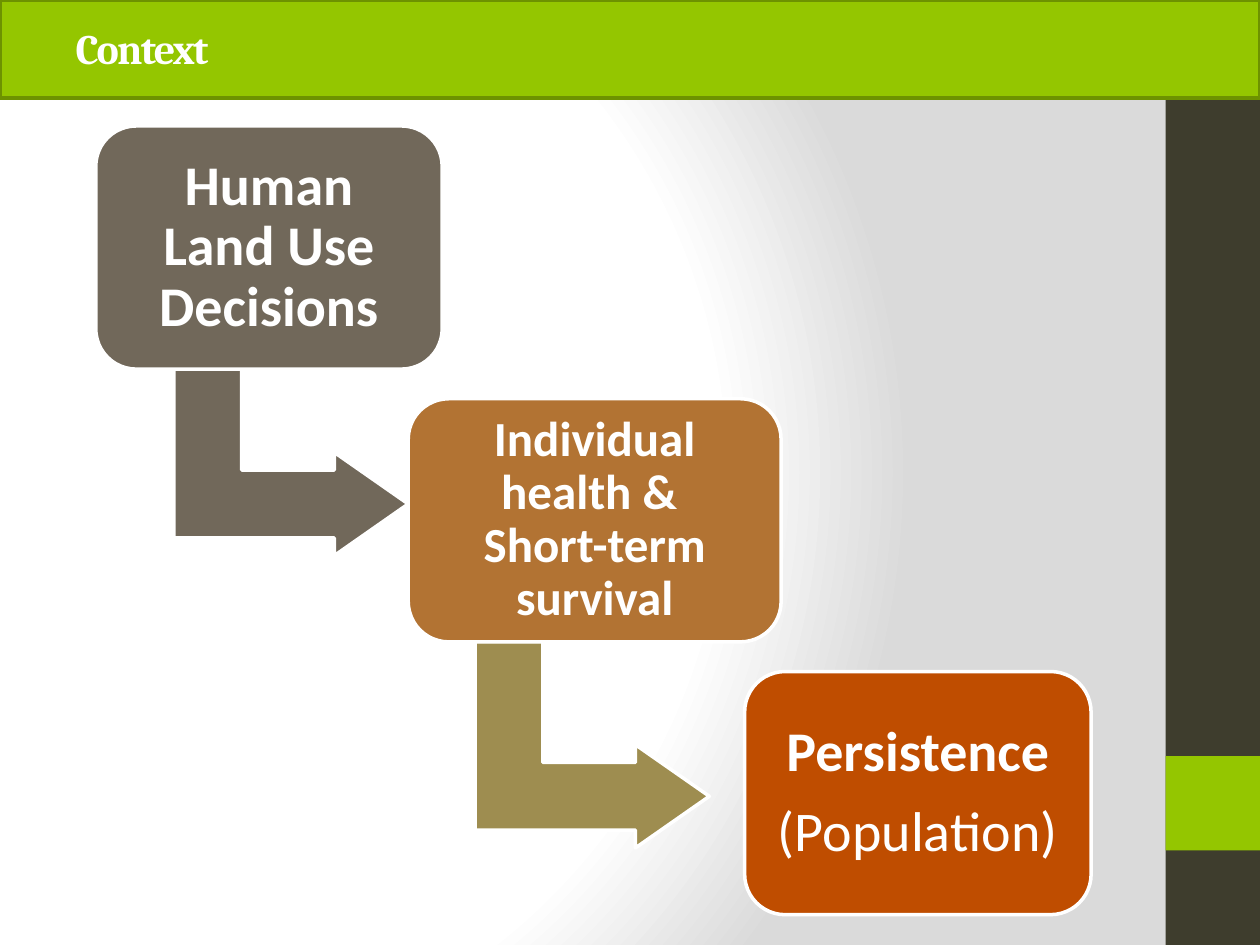
from pptx import Presentation
from pptx.dml.color import RGBColor
from pptx.enum.shapes import MSO_SHAPE
from pptx.enum.text import MSO_ANCHOR, MSO_AUTO_SIZE, PP_ALIGN
from pptx.oxml import parse_xml
from pptx.oxml.ns import nsdecls
from pptx.util import Inches, Pt

RECT = MSO_SHAPE.RECTANGLE
ROUNDED = MSO_SHAPE.ROUNDED_RECTANGLE
BENT_ARROW = MSO_SHAPE.BENT_UP_ARROW
MIDDLE = MSO_ANCHOR.MIDDLE
NO_FIT = MSO_AUTO_SIZE.NONE
LEFT, CENTER = PP_ALIGN.LEFT, PP_ALIGN.CENTER

CELL = Inches(0.25)
COLS, ROWS = 40, 30
GREEN, DARK, WHITE = "94C600", "3E3D2D", "FFFFFF"
STOPS = [(0, WHITE), (75, WHITE), (100, "DADADA")]
ARROW_ADJ = (0.328, 0.25, 0.358)
ARROW_SIZE = (6.56, 7.44)
STEP_HEIGHT, STEP_PITCH = 7.72, 8.66
STEPS = [
    (0, 11, "71685A", 32, [("Human Land Use Decisions", True)]),
    (9.92, 11.84, "B27333", 28, [("Individual health &  Short-term survival", True)]),
    (20.6, 11, "BF4D00", 32, [("Persistence", True), ("(Population)", False)]),
]
ARROWS = [(2.92, 6.64, "71685A"), (12.48, 15.92, "9E8D50")]


def color(value):
    return RGBColor.from_string(value)


def grid(*cells):
    return [round(c * CELL) for c in cells]


def add_block(s, kind, box, fill, line=None):
    sp = s.shapes.add_shape(kind, *grid(*box))
    sp.shadow.inherit = False
    sp.fill.solid()
    sp.fill.fore_color.rgb = color(fill)
    if line:
        sp.line.color.rgb = color(line)
        sp.line.width = Pt(2)
    else:
        sp.line.fill.background()
    return sp


def add_run(p, text, font, size, bold):
    r = p.add_run()
    r.text = text
    r.font.name, r.font.size, r.font.bold = font, Pt(size), bold
    r.font.color.rgb = color(WHITE)
    return r


def add_background(s):
    stops = "".join(
        f'<a:gs pos="{pos * 1000}"><a:srgbClr val="{value}"/></a:gs>'
        for pos, value in STOPS
    )
    gradient = parse_xml(
        f'<a:gradFill {nsdecls("a")} rotWithShape="1"><a:gsLst>{stops}</a:gsLst>'
        '<a:path path="circle">'
        '<a:fillToRect l="20000" t="50000" r="100000" b="50000"/>'
        "</a:path></a:gradFill>"
    )
    s.background.fill.solid()
    bg = s._element.cSld.bg.bgPr
    bg.replace(bg[0], gradient)


def add_sidebar(s, x, y, w, h):
    add_block(s, RECT, (x, y, w, h), DARK)
    add_block(s, RECT, (x, y + 0.8 * h, w, w), GREEN)


def add_step(s, box, fill, size, lines):
    sp = add_block(s, ROUNDED, box, fill, WHITE)
    tf = sp.text_frame
    tf.word_wrap = True
    tf.vertical_anchor = MIDDLE
    tf.margin_left = tf.margin_right = Inches(0.14)
    tf.margin_top = tf.margin_bottom = Inches(0.14)
    for i, (text, bold) in enumerate(lines):
        p = tf.add_paragraph() if i else tf.paragraphs[0]
        p.alignment = CENTER
        p.line_spacing = 0.9
        p.space_after = Pt(0.35 * size)
        add_run(p, text, "Calibri", size, bold)


def add_arrow(s, x, y, fill):
    sp = add_block(s, BENT_ARROW, (x, y, *ARROW_SIZE), fill, WHITE)
    sp.rotation = 90
    for i, value in enumerate(ARROW_ADJ):
        sp.adjustments[i] = value


def add_cascade(s, x, y):
    for i, (dx, w, fill, size, lines) in enumerate(STEPS):
        if i < len(ARROWS):
            ax, ay, arrow_fill = ARROWS[i]
            add_arrow(s, x + ax, y + ay, arrow_fill)
        add_step(s, (x + dx, y + i * STEP_PITCH, w, STEP_HEIGHT), fill, size, lines)


def add_title(s, box, text):
    sp = s.shapes.title
    sp.left, sp.top, sp.width, sp.height = grid(*box)
    s.shapes._spTree.append(sp._element)
    tf = sp.text_frame
    tf.word_wrap = True
    tf.auto_size = NO_FIT
    tf.vertical_anchor = MIDDLE
    p = tf.paragraphs[0]
    p.alignment = LEFT
    r = add_run(p, text, "Cambria", 24, True)
    r.font._element.set("spc", "-100")


def main():
    prs = Presentation()
    prs.slide_width, prs.slide_height = grid(COLS, ROWS)
    s = prs.slides.add_slide(prs.slide_layouts[5])
    add_background(s)
    add_sidebar(s, COLS - 3, 0, 3, ROWS)
    add_block(s, RECT, (0, 0, COLS, 3.12), GREEN, "6D9200")
    add_cascade(s, 3.04, 4)
    add_title(s, (2, -1, 33.32, 5), "Context")
    prs.save("out.pptx")


if __name__ == "__main__":
    main()
